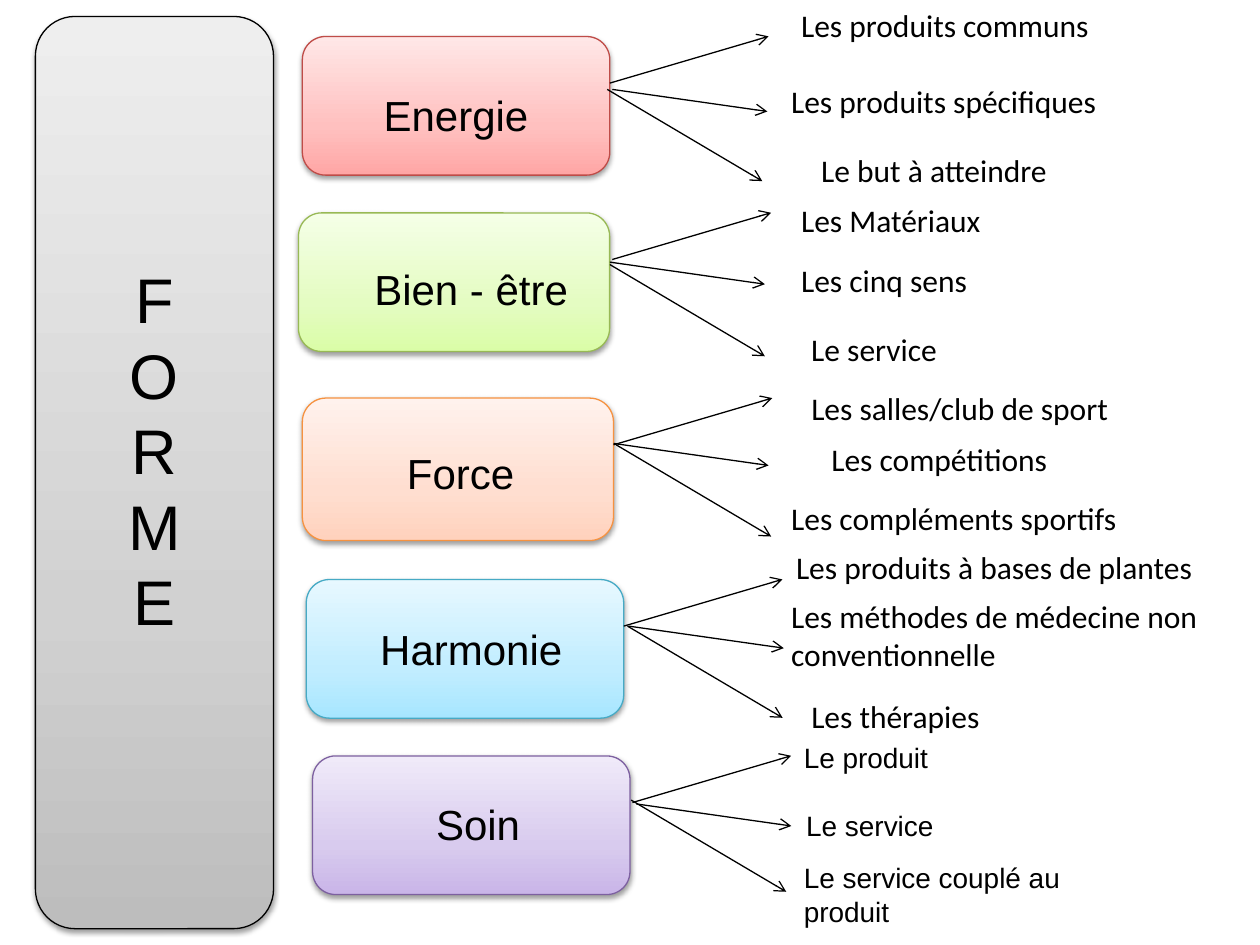
from copy import deepcopy
from dataclasses import dataclass

from lxml.etree import SubElement
from pptx import Presentation
from pptx.dml.color import RGBColor
from pptx.enum.shapes import MSO_CONNECTOR, MSO_SHAPE
from pptx.enum.text import MSO_AUTO_SIZE, PP_ALIGN
from pptx.oxml import parse_xml
from pptx.oxml.ns import nsdecls, qn
from pptx.util import Pt


@dataclass(frozen=True)
class Theme:
    ink: str = "000000"
    line: float = 0.75
    head_font: str = "Arial"
    note_font: str = "Calibri"
    acronym: int = 36
    label: int = 24
    note: int = 18
    small_note: int = 16
    grey: tuple = ("BDBDBD", "D1D1D1", "EEEEEE")
    red: tuple = ("FFA6A5", "FFC0BF", "FFE7E7")
    green: tuple = ("DAFDA7", "E4FCC2", "F5FFE7")
    orange: tuple = ("FFD2BD", "FFDED0", "FFF2ED")
    blue: tuple = ("A7E6FF", "C1EDFF", "E7F8FF")
    purple: tuple = ("C9B5E8", "D8CBEE", "F0EAF9")


T = Theme()
STOPS = (0, 0.35, 1)
ARROWS = ((90.7, -26.7), (88.6, 12.6), (88.6, 52.4))


@dataclass
class Note:
    """Text placed by its offset from the top right corner of its card."""
    x: float
    y: float
    w: float
    text: str
    wrap: bool = True
    lines: int = 1


@dataclass
class Branch:
    """Label is (x, y, width) from the card's top left; starts are from its top right."""
    name: str
    box: tuple
    fill: tuple
    line: str
    label: tuple
    starts: tuple
    notes: tuple
    font: str = T.note_font
    size: int = T.note


BRANCHES = (
    Branch("Energie", (172.8, 20.9, 175.7, 79.2), T.red, "BF4C48", (8.6, 26.6, 158.4),
           ((0, 26.6), (1.4, 30.2), (-1.5, 30.2)),
           (Note(102.2, -20.9, 244.1, "Les produits communs"),
            Note(96.5, 22.3, 203.8, "Les produits spécifiques"),
            Note(113.7, 61.9, 193, "Le but à atteindre"))),
    Branch("Bien - être", (170.6, 121.7, 177.8, 79.2), T.green, "98B955", (19.5, 25.2, 158.4),
           ((1.5, 26.6), (0.1, 28.1), (0.1, 29.5)),
           (Note(102.3, -10.1, 187.2, "Les Matériaux"),
            Note(102.3, 23.7, 136.1, "Les cinq sens"),
            Note(108.1, 63.3, 153.4, "Le service"))),
    Branch("Force", (172.8, 227.5, 177.8, 81.4), T.orange, "F69240", (16.6, 24.5, 147.6),
           ((0, 26.7), (0, 25.9), (1.5, 26.7)),
           (Note(105.9, -8.6, 186.5, "Les salles/club de sport", wrap=False),
            Note(117.4, 20.2, 139.7, "Les compétitions"),
            Note(94.4, 54, 238.3, "Les compléments sportifs"))),
    Branch("Harmonie", (175, 331.2, 181.4, 79.2), T.blue, "46AAC5", (25.9, 21.6, 136.8),
           ((0, 26.6), (2.9, 26.6), (2.2, 26.6)),
           (Note(91.4, -21.6, 272.2, "Les produits à bases de plantes"),
            Note(88.6, 6.5, 254.2, "Les méthodes de médecine non\nconventionnelle",
                 wrap=False, lines=2),
            Note(100.1, 63.4, 111.6, "Les thérapies", wrap=False))),
    Branch("Soin", (178.6, 432, 181.4, 79.2), T.purple, "7D60A0", (20.8, 20.9, 147.6),
           ((1.4, 26.6), (3.6, 27.4), (0.7, 25.2)),
           (Note(92.2, -12.2, 181.4, "Le produit"),
            Note(93.6, 26.6, 181.4, "Le service"),
            Note(92.2, 56.2, 181.4, "Le service couplé au produit", lines=2)),
           font=T.head_font, size=T.small_note),
)


def add_text(s, text, x, y, w, *, size, font, align=PP_ALIGN.LEFT, wrap=True, lines=1):
    """Add a text box whose height follows from its number of lines."""
    sp = s.shapes.add_textbox(Pt(x), Pt(y), Pt(w), Pt(lines * size * 1.2 + 7.2))
    tf = sp.text_frame
    tf.word_wrap = wrap
    tf.auto_size = MSO_AUTO_SIZE.SHAPE_TO_FIT_TEXT
    for i, words in enumerate(text.split("\n")):
        p = tf.add_paragraph() if i else tf.paragraphs[0]
        p.alignment = align
        r = p.add_run()
        r.text = words
        r.font.size = Pt(size)
        r.font.name = font
        r.font.color.rgb = RGBColor.from_string(T.ink)


def add_card(s, box, colours, line):
    """Add a rounded card with a vertical gradient and a soft shadow."""
    sp = s.shapes.add_shape(MSO_SHAPE.ROUNDED_RECTANGLE, *map(Pt, box))
    sp.line.color.rgb = RGBColor.from_string(line)
    sp.line.width = Pt(T.line)
    sp.fill.gradient()
    sp.fill.gradient_angle = 90
    stops = sp._element.spPr.find(".//" + qn("a:gsLst"))
    stops.insert(1, deepcopy(stops[0]))
    for stop, position, colour in zip(sp.fill.gradient_stops, STOPS, colours):
        stop.position = position
        stop.color.rgb = RGBColor.from_string(colour)
    sp.shadow.inherit = False
    sp._element.spPr.find(qn("a:effectLst")).append(parse_xml(
        f'<a:outerShdw {nsdecls("a")} blurRad="{Pt(3.1)}" dist="{Pt(1.6)}" dir="5400000" '
        f'rotWithShape="0"><a:srgbClr val="{T.ink}"><a:alpha val="38000"/></a:srgbClr>'
        '</a:outerShdw>'))


def add_arrow(s, x, y, dx, dy):
    sp = s.shapes.add_connector(MSO_CONNECTOR.STRAIGHT, Pt(x), Pt(y), Pt(x + dx), Pt(y + dy))
    sp.line.color.rgb = RGBColor.from_string(T.ink)
    sp.line.width = Pt(T.line)
    SubElement(sp.line._get_or_add_ln(), qn("a:tailEnd"), type="arrow")
    SubElement(sp._element.spPr, qn("a:effectLst"))


def add_acronym(s, box):
    add_card(s, box, T.grey, T.ink)
    x, y, w, _ = box
    add_text(s, "\n".join("FORME"), x + 22.7, y + 136, w - 45.4, size=T.acronym,
             font=T.head_font, align=PP_ALIGN.CENTER, lines=5)


def add_branch(s, branch):
    """Add a labelled card, its three arrows and the notes they point to."""
    left, top, width, _ = branch.box
    right = left + width
    add_card(s, branch.box, branch.fill, branch.line)
    x, y, w = branch.label
    add_text(s, branch.name, left + x, top + y, w, size=T.label,
             font=T.head_font, align=PP_ALIGN.CENTER)
    for (x, y), delta, note in zip(branch.starts, ARROWS, branch.notes):
        add_arrow(s, right + x, top + y, *delta)
        add_text(s, note.text, right + note.x, top + note.y, note.w, size=branch.size,
                 font=branch.font, wrap=note.wrap, lines=note.lines)


def main():
    prs = Presentation()
    prs.slide_width, prs.slide_height = Pt(720), Pt(540)
    s = prs.slides.add_slide(prs.slide_layouts[6])
    add_acronym(s, (20.2, 9.4, 136.1, 521.3))
    for branch in BRANCHES:
        add_branch(s, branch)
    prs.save("out.pptx")


if __name__ == "__main__":
    main()
